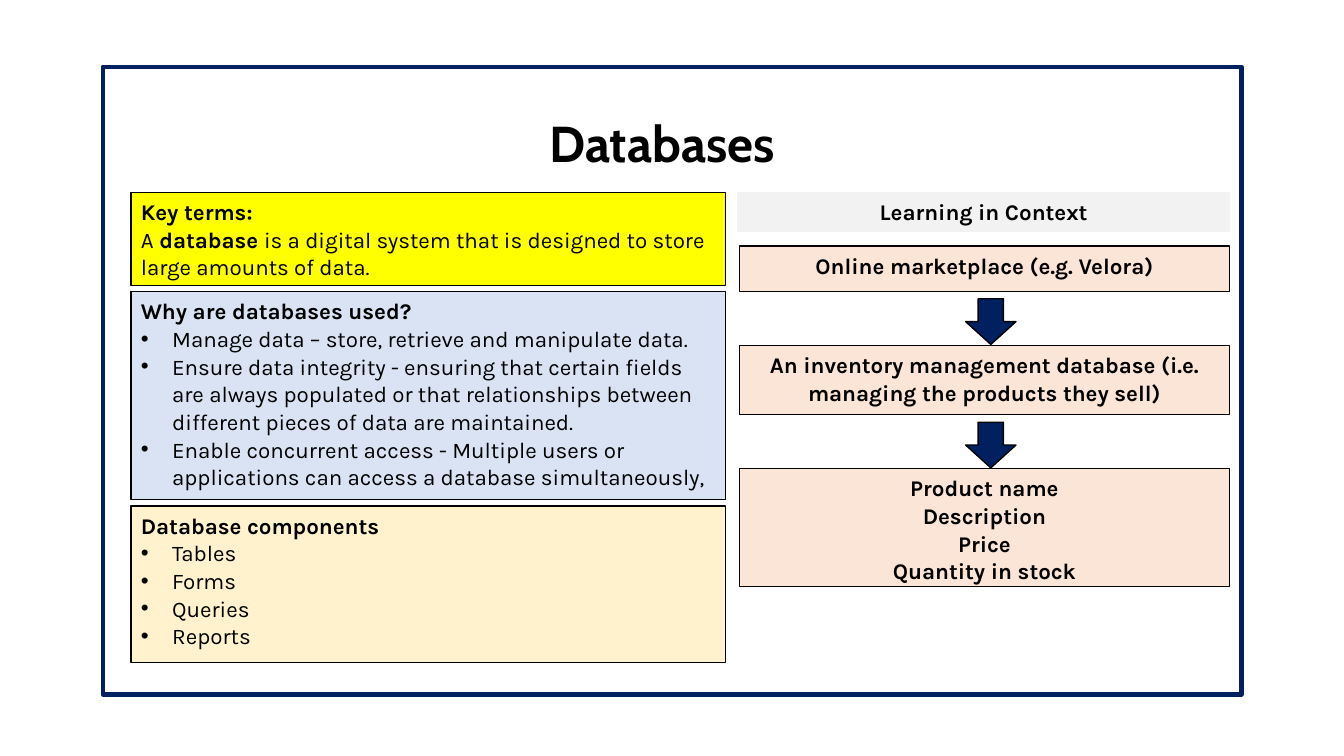
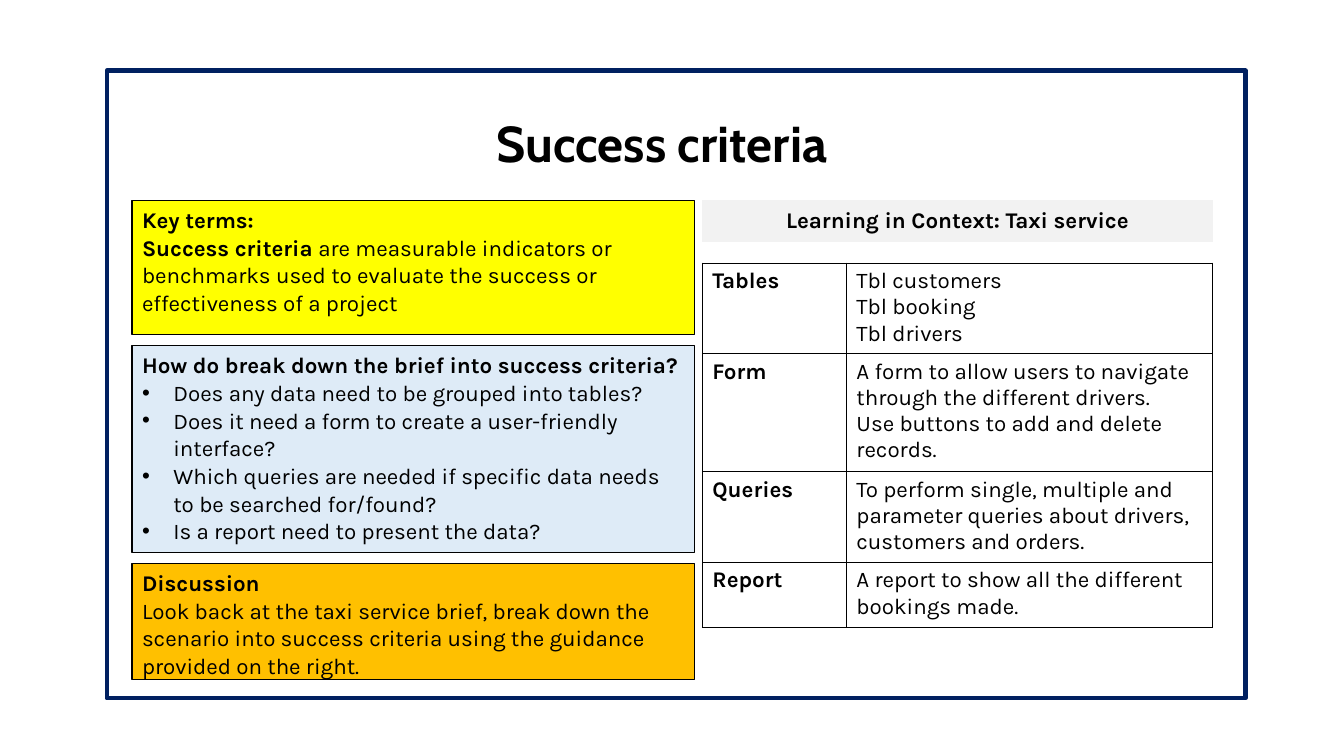
import pptx
import pptx.dml.color
import pptx.enum.shapes
import pptx.enum.text
import pptx.oxml
import pptx.oxml.ns
import pptx.util

Cm = pptx.util.Cm
Pt = pptx.util.Pt
SHAPES = pptx.enum.shapes.MSO_SHAPE
ALIGN = pptx.enum.text.PP_ALIGN

COLORS = {
    "ink": "000000",
    "paper": "FFFFFF",
    "navy": "002060",
    "yellow": "FFFF00",
    "periwinkle": "DAE3F3",
    "sky": "DEEBF7",
    "cream": "FFF2CC",
    "orange": "FFC000",
    "grey": "F2F2F2",
    "peach": "FBE5D6",
}
TITLE_FONT = {"name": "Cabin", "size": Pt(36)}
BODY_FONT = {"name": "Karla", "size": Pt(16)}
BOX_SPACING = 1.03
BULLET = "• "
HANGING = Cm(0.79)

DATABASE_NOTES = [
    ("yellow", 2.34, [
        "*Key terms:*",
        "A* database *is a digital system that is designed to store large amounts of data.",
    ]),
    ("periwinkle", 5.24, [
        "*Why are databases used?*",
        "• Manage data – store, retrieve and manipulate data.",
        "• Ensure data integrity - ensuring that certain fields are always populated "
        "or that relationships between different pieces of data are maintained.",
        "• Enable concurrent access - Multiple users or applications can access "
        "a database simultaneously,",
    ]),
    ("cream", 3.94, [
        "*Database components*",
        "• Tables",
        "• Forms",
        "• Queries",
        "• Reports",
    ]),
]
MARKETPLACE_STEPS = [
    (1.14, ["*Online marketplace (e.g. Velora)*"]),
    (1.75, ["*An inventory management database (i.e. managing the products they sell)*"]),
    (2.97, ["*Product name*", "*Description*", "*Price*", "*Quantity in stock*"]),
]
CRITERIA_NOTES = [
    ("yellow", 3.38, [
        "*Key terms:*",
        "*Success criteria *are measurable indicators or benchmarks used to evaluate "
        "the success or effectiveness of a project",
    ]),
    ("sky", 5.21, [
        "*How do break down the brief into success criteria?*",
        "• Does any data need to be grouped into tables?",
        "• Does it need a form to create a user-friendly interface?",
        "• Which queries are needed if specific data needs to be searched for/found?",
        "• Is a report need to present the data?",
    ]),
    ("orange", 2.92, [
        "*Discussion*",
        "Look back at the taxi service brief, break down the scenario into success "
        "criteria using the guidance provided on the right.",
    ]),
]
TAXI_COMPONENTS = [
    (2.28, "Tables", ["Tbl customers", "Tbl booking", "Tbl drivers"]),
    (2.97, "Form", ["A form to allow users to navigate through the different drivers.",
                    "Use buttons to add and delete records."]),
    (2.28, "Queries", ["To perform single, multiple and parameter queries about drivers, "
                       "customers and orders."]),
    (1.63, "Report", ["A report to show all the different bookings made."]),
]


def rgb(color):
    return pptx.dml.color.RGBColor.from_string(COLORS[color])


def set_all(target, values):
    for name, value in values.items():
        setattr(target, name, value)


def write(frame, lines, font, align=ALIGN.LEFT, spacing=1.0):
    """Write one paragraph per line; *stars* mark bold, a leading • marks a bullet."""
    frame.word_wrap = True
    for index, line in enumerate(lines):
        paragraph = frame.paragraphs[0] if index == 0 else frame.add_paragraph()
        if line.startswith(BULLET):
            add_bullet(paragraph)
            line = line.removeprefix(BULLET)
        set_all(paragraph, {"alignment": align, "line_spacing": spacing})
        for position, words in enumerate(line.split("*")):
            if words:
                run = paragraph.add_run()
                run.text = words
                set_all(run.font, {**font, "bold": position % 2 == 1})
                run.font.color.rgb = rgb("ink")


def add_bullet(paragraph):
    properties = paragraph._p.get_or_add_pPr()
    properties.set("marL", str(HANGING))
    properties.set("indent", str(-HANGING))
    for tag, attribute, value in (("buFont", "typeface", "Arial"),
                                  ("buChar", "char", BULLET.strip())):
        properties.append(pptx.oxml.parse_xml(
            f'<a:{tag} {pptx.oxml.ns.nsdecls("a")} {attribute}="{value}"/>'))


def add_box(slide, box, fill, line="ink", weight=1, kind=SHAPES.RECTANGLE):
    shape = slide.shapes.add_shape(kind, *map(Cm, box))
    shape.shadow.inherit = False
    shape.fill.solid()
    shape.fill.fore_color.rgb = rgb(fill)
    shape.line.color.rgb = rgb(line)
    shape.line.width = Pt(weight)
    return shape


def add_text_box(slide, box, fill, lines, line="ink", align=ALIGN.LEFT):
    frame = add_box(slide, box, fill, line).text_frame
    frame.vertical_anchor = pptx.enum.text.MSO_ANCHOR.TOP
    write(frame, lines, BODY_FONT, align, BOX_SPACING)


def add_framed_slide(deck, title, left, top):
    """Add a slide with its navy frame at (left, top) and its title."""
    slide = deck.slides.add_slide(deck.slide_layouts[6])
    add_box(slide, (left, top, 28.7, 15.82), "paper", "navy", 3)
    heading = slide.shapes.add_textbox(Cm(3.3), Cm(2.69), Cm(26.77), Cm(1.8))
    write(heading.text_frame, [f"*{title}*"], TITLE_FONT, ALIGN.CENTER)
    return slide


def add_notes_column(slide, left, top, width, gap, notes):
    for fill, height, lines in notes:
        add_text_box(slide, (left, top, width, height), fill, lines)
        top += height + gap


def add_context_heading(slide, box, words):
    add_text_box(slide, box, "grey", [f"*{words}*"], "grey", ALIGN.CENTER)


def add_context_flow(slide, left, top, width, steps):
    """Stack the steps, with a down arrow in each gap between two of them."""
    gap, arrow_size, arrow_drop, arrow_shift = 1.36, (1.27, 1.15), 0.19, 0.16
    arrow_left = left + (width - arrow_size[0]) / 2 + arrow_shift
    for index, (height, lines) in enumerate(steps):
        if index:
            add_box(slide, (arrow_left, top - gap + arrow_drop, *arrow_size), "navy",
                    kind=SHAPES.DOWN_ARROW)
        add_text_box(slide, (left, top, width, height), "peach", lines, align=ALIGN.CENTER)
        top += height + gap


def outline_cell(cell):
    cell.fill.background()
    properties = cell._tc.get_or_add_tcPr()
    for index, side in enumerate(("lnL", "lnR", "lnT", "lnB")):
        properties.insert(index, pptx.oxml.parse_xml(
            f'<a:{side} {pptx.oxml.ns.nsdecls("a")} w="{Pt(1)}"><a:solidFill>'
            f'<a:srgbClr val="{COLORS["ink"]}"/></a:solidFill></a:{side}>'))


def add_components_table(slide, left, top, column_widths, components):
    total_height = sum(height for height, _, _ in components)
    table = slide.shapes.add_table(
        len(components), len(column_widths), Cm(left), Cm(top),
        Cm(sum(column_widths)), Cm(total_height)).table
    set_all(table, {"first_row": False, "horz_banding": False})
    for column, width in zip(table.columns, column_widths):
        column.width = Cm(width)
    for row, (height, component, details) in zip(table.rows, components):
        row.height = Cm(height)
        for cell, lines in zip(row.cells, ([f"*{component}*"], details)):
            outline_cell(cell)
            write(cell.text_frame, lines, BODY_FONT)


def add_databases_slide(deck):
    slide = add_framed_slide(deck, "Databases", 2.59, 1.68)
    add_notes_column(slide, 3.3, 4.85, 14.99, 0.16, DATABASE_NOTES)
    add_context_heading(slide, (18.59, 4.85, 12.4, 0.99), "Learning in Context")
    add_context_flow(slide, 18.64, 6.2, 12.34, MARKETPLACE_STEPS)


def add_success_criteria_slide(deck):
    slide = add_framed_slide(deck, "Success criteria", 2.69, 1.78)
    add_notes_column(slide, 3.33, 5.05, 14.17, 0.28, CRITERIA_NOTES)
    add_context_heading(slide, (17.7, 5.05, 12.86, 1.04), "Learning in Context: Taxi service")
    add_components_table(slide, 17.7, 6.63, (3.63, 9.23), TAXI_COMPONENTS)


def main():
    deck = pptx.Presentation()
    set_all(deck, {"slide_width": Cm(33.87), "slide_height": Cm(19.05)})
    add_databases_slide(deck)
    add_success_criteria_slide(deck)
    deck.save("out.pptx")


if __name__ == "__main__":
    main()
